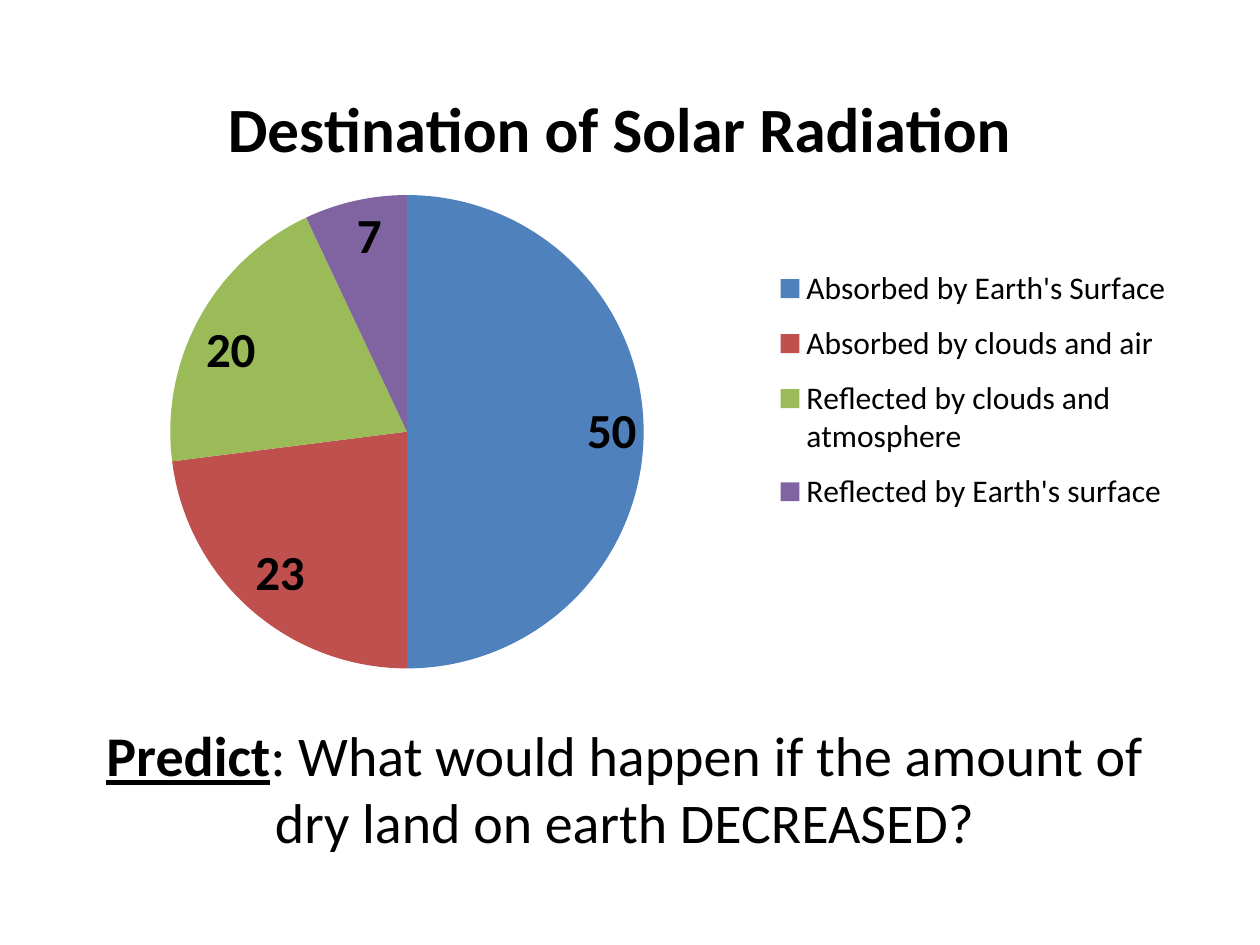
from lxml import etree
from pptx import Presentation
from pptx import util as u
from pptx.chart.data import CategoryChartData
from pptx.dml.color import RGBColor
from pptx.enum import chart as ch, text
from pptx.oxml import parse_xml
from pptx.oxml.ns import nsdecls, qn

WIDE, HIGH = 10, 7.5
HUES = {"ink": "000000", "paper": "FFFFFF", "blue": "4F81BD",
        "red": "C0504D", "green": "9BBB59", "plum": "8064A2"}
PARTS = [("Absorbed by Earth's Surface", 50, "blue"),
         ("Absorbed by clouds and air", 23, "red"),
         ("Reflected by clouds and atmosphere", 20, "green"),
         ("Reflected by Earth's surface", 7, "plum")]


def rgb(hue):
    return RGBColor.from_string(HUES[hue])


def place(host, spot, inner=False):
    """Fix a chart part at x, y and optional w, h, as shares of the chart."""
    for old in host.findall(qn("c:layout")):
        host.remove(old)
    lay = parse_xml(f"<c:layout {nsdecls('c')}><c:manualLayout/></c:layout>")
    marks = [("layoutTarget", "inner")] if inner else []
    marks += [("xMode", "edge"), ("yMode", "edge"), *zip("xywh", spot)]
    for tag, val in marks:
        etree.SubElement(lay[0], qn("c:" + tag)).set("val", str(val))
    return lay


class Deck:
    face = "Calibri"

    def __init__(self):
        self.prs = Presentation()
        self.prs.slide_width = u.Inches(WIDE)
        self.prs.slide_height = u.Inches(HIGH)
        self.slide = self.prs.slides.add_slide(self.prs.slide_layouts[6])
        fill = self.slide.background.fill
        fill.solid()
        fill.fore_color.rgb = rgb("paper")

    def box(self, x, y, w, h):
        """Turn shares of the slide into lengths."""
        return [u.Inches(n) for n in (x * WIDE, y * HIGH, w * WIDE, h * HIGH)]

    def style(self, font, size, bold=False, line=False):
        font.name, font.size = self.face, u.Pt(size)
        font.bold, font.underline = bold, line
        font.color.rgb = rgb("ink")

    def pie(self, spot, title, parts):
        data = CategoryChartData()
        data.categories = [name for name, _, _ in parts]
        data.add_series("Series 1", [val for _, val, _ in parts])
        chart = self.slide.shapes.add_chart(
            ch.XL_CHART_TYPE.PIE, *self.box(*spot), data).chart
        self.style(chart.font, 18)

        run = chart.chart_title.text_frame.paragraphs[0].add_run()
        run.text = title
        self.style(run.font, 36, bold=True)
        chart.chart_title.include_in_layout = False
        head = chart.chart_title._element
        head.find(qn("c:tx")).addnext(place(head, (0.16, 0.05)))

        chart.has_legend = True
        key = chart.legend
        key.position = ch.XL_LEGEND_POSITION.RIGHT
        key.include_in_layout = False
        self.style(key.font, 18)
        side = key._element
        side.find(qn("c:legendPos")).addnext(
            place(side, (0.64, 0.33, 0.35, 0.43)))

        plot = chart.plots[0]
        plot.vary_by_categories = True
        area = plot._element.getparent()
        area.insert(0, place(area, (0.12, 0.24, 0.41, 0.74), inner=True))
        for spin, (_, _, hue) in enumerate(parts):
            fill = plot.series[0].points[spin].format.fill
            fill.solid()
            fill.fore_color.rgb = rgb(hue)

        plot.has_data_labels = True
        tags = plot.data_labels
        tags.show_value, tags.show_percentage = True, False
        tags.position = ch.XL_LABEL_POSITION.INSIDE_END
        self.style(tags.font, 28, bold=True)

    def text(self, spot, runs, size):
        frame = self.slide.shapes.add_textbox(*self.box(*spot)).text_frame
        frame.word_wrap = True
        frame.auto_size = text.MSO_AUTO_SIZE.SHAPE_TO_FIT_TEXT
        para = frame.paragraphs[0]
        para.alignment = text.PP_ALIGN.CENTER
        for words, strong in runs:
            run = para.add_run()
            run.text = words
            self.style(run.font, size, bold=strong, line=strong)


def main():
    deck = Deck()
    deck.pie((0.025, 0.044, 0.917, 0.677),
             "Destination of Solar Radiation", PARTS)
    deck.text((0.05, 0.756, 0.892, 0.157),
              [("Predict", True),
               (": What would happen if the amount of dry land on earth "
                "DECREASED?", False)], 32)
    deck.prs.save("out.pptx")


if __name__ == "__main__":
    main()
